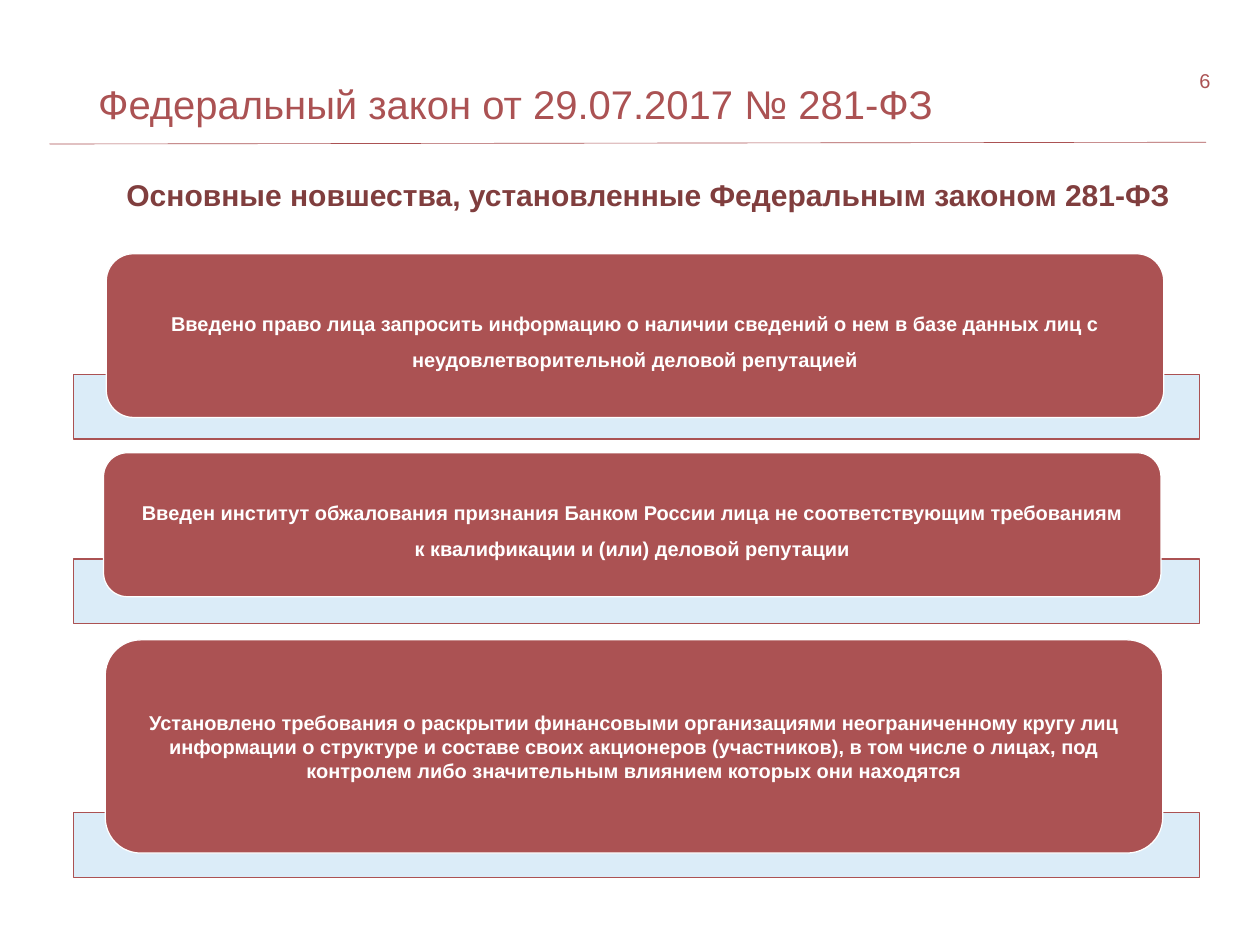
import dataclasses

import pptx
import pptx.dml.color
import pptx.enum.shapes
import pptx.enum.text
import pptx.oxml
import pptx.oxml.ns
import pptx.util

Pt = pptx.util.Pt
Align = pptx.enum.text.PP_ALIGN
Anchor = pptx.enum.text.MSO_ANCHOR
Shape = pptx.enum.shapes.MSO_SHAPE


@dataclasses.dataclass(frozen=True)
class Theme:
    font: str = "Arial"
    red: str = "AB5253"
    dark: str = "803E3E"
    pale: str = "D8EAF8"
    white: str = "FFFFFF"
    title: int = 32
    head: int = 24
    body: int = 16


theme = Theme()


def paint(shape, fill, line):
    """Give a shape a flat fill and a thin line, without shadow."""
    shape.shadow.inherit = False
    shape.fill.solid()
    shape.fill.fore_color.rgb = pptx.dml.color.RGBColor.from_string(fill)
    shape.line.color.rgb = pptx.dml.color.RGBColor.from_string(line)
    shape.line.width = Pt(1)


def write(shape, text, size, color, bold=False, align=Align.LEFT,
          anchor=Anchor.TOP, pad=(0, 0), space=1.0):
    """Put one paragraph into a shape; pad is the side and top inset."""
    frame = shape.text_frame
    frame.word_wrap = True
    frame.vertical_anchor = anchor
    frame.margin_left = frame.margin_right = Pt(pad[0])
    frame.margin_top = frame.margin_bottom = Pt(pad[1])
    para = frame.paragraphs[0]
    para.alignment = align
    para.line_spacing = space
    run = para.add_run()
    run.text = text
    run.font.name = theme.font
    run.font.size = Pt(size)
    run.font.bold = bold
    run.font.color.rgb = pptx.dml.color.RGBColor.from_string(color)


deck = pptx.Presentation()
deck.slide_width, deck.slide_height = Pt(1008), Pt(756)
slide = deck.slides.add_slide(deck.slide_layouts[6])
shapes = slide.shapes

# Page number, title and rule
number = shapes.add_textbox(Pt(928.8), Pt(38.2), Pt(39.6), Pt(51.8))
write(number, "6", theme.body, theme.red, align=Align.RIGHT, anchor=Anchor.MIDDLE)

title = shapes.add_textbox(Pt(67.7), Pt(58.3), Pt(725.8), Pt(66.2))
write(title, "Федеральный закон от 29.07.2017 № 281-ФЗ", theme.title, theme.red,
      pad=(10.8, 5))

rule = shapes.add_connector(pptx.enum.shapes.MSO_CONNECTOR.STRAIGHT,
                            Pt(39.6), Pt(115.2), Pt(964.8), Pt(113.8))
rule.line.color.rgb = pptx.dml.color.RGBColor.from_string(theme.red)
rule.line.width = Pt(0.5)
props = rule.element.spPr
props.append(pptx.oxml.parse_xml(
    f"<a:effectLst {pptx.oxml.ns.nsdecls('a')}/>"))

# Each point: bar top, card left, card top, card height, line spacing, text
points = [
    (299.5, 85, 203, 131, 1.5,
     "Введено право лица запросить информацию о наличии сведений о нем "
     "в базе данных лиц с неудовлетворительной деловой репутацией"),
    (447.1, 82.8, 362.2, 115.2, 1.5,
     "Введен институт обжалования признания Банком России лица "
     "не соответствующим требованиям к квалификации и (или) деловой репутации"),
    (650.2, 84.2, 511.9, 170.6, 1.0,
     "Установлено требования о раскрытии финансовыми организациями "
     "неограниченному кругу лиц информации о структуре и составе своих "
     "акционеров (участников), в том числе о лицах, под контролем либо "
     "значительным влиянием которых они находятся"),
]
for base, left, top, height, space, text in points:
    bar = shapes.add_shape(Shape.RECTANGLE, Pt(59), Pt(base), Pt(900.7), Pt(51.8))
    paint(bar, theme.pale, theme.red)
    tint = bar.fill._xPr.find(".//" + pptx.oxml.ns.qn("a:srgbClr"))
    tint.append(pptx.oxml.parse_xml(
        f'<a:alpha {pptx.oxml.ns.nsdecls("a")} val="90000"/>'))

    card = shapes.add_shape(Shape.ROUNDED_RECTANGLE,
                            Pt(left), Pt(top), Pt(846), Pt(height))
    paint(card, theme.red, theme.white)
    write(card, text, theme.body, theme.white, bold=True, align=Align.CENTER,
          anchor=Anchor.MIDDLE, pad=(23.8, 0), space=space)

# Heading above the points
head = shapes.add_textbox(Pt(69.1), Pt(144.7), Pt(898.6), Pt(566.6))
write(head, "Основные новшества, установленные Федеральным законом 281-ФЗ",
      theme.head, theme.dark, bold=True, align=Align.CENTER, space=0.9)

deck.save("out.pptx")
